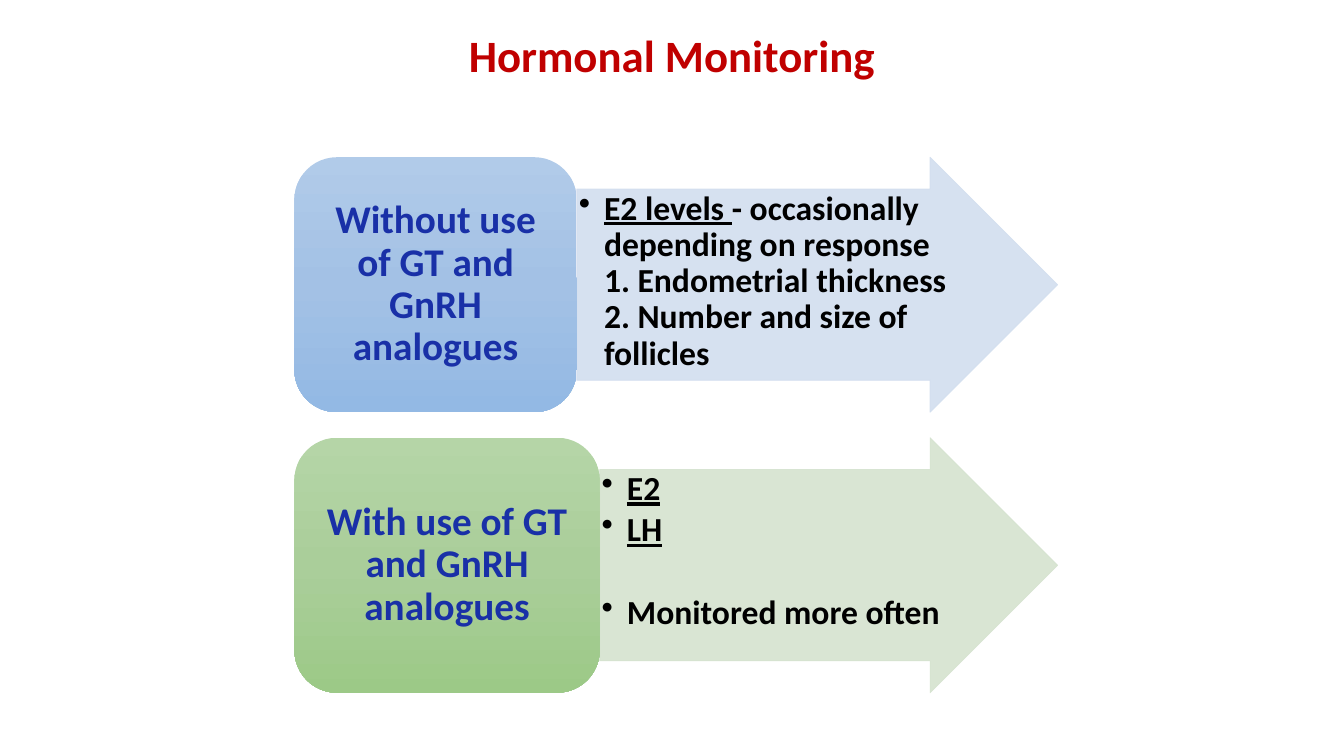
import copy
from dataclasses import dataclass

import pptx
import pptx.dml.color
import pptx.enum.shapes
import pptx.enum.text
import pptx.oxml
import pptx.oxml.ns
import pptx.util

Inches, Pt = pptx.util.Inches, pptx.util.Pt
SHAPE = pptx.enum.shapes.MSO_SHAPE
ALIGN = pptx.enum.text.PP_ALIGN
ANCHOR = pptx.enum.text.MSO_ANCHOR
qn = pptx.oxml.ns.qn


@dataclass(frozen=True)
class Theme:
    font: str = "Calibri"
    title: str = "C00000"
    label: str = "1930A7"
    body: str = "000000"
    title_size: int = 32
    label_size: int = 28
    body_size: int = 24
    blues: tuple = ("B1CBE9", "A3C1E5", "93B9E4")
    greens: tuple = ("B5D5A7", "AACE9A", "9CC987")
    blue_tint: str = "D2DEEF"
    green_tint: str = "D5E3CF"


THEME = Theme()

# Grid: two rows, each split into a label and an arrow
WIDTH, HEIGHT = 13.33, 7.5
LEFT, TOP = 2.92, 1.56
SPAN, ROW = 7.57, 2.53
PITCH = ROW * 1.1


def rgb(code):
    return pptx.dml.color.RGBColor.from_string(code)


def frame(shape, anchor, side, edge):
    box = shape.text_frame
    box.word_wrap = True
    box.vertical_anchor = anchor
    box.margin_left = box.margin_right = Inches(side)
    box.margin_top = box.margin_bottom = Inches(edge)
    return box


def write(para, text, size, color, align=ALIGN.LEFT, lead=0.9, line=False):
    """Add bold text to a paragraph; a newline breaks the line."""
    para.alignment = align
    para.line_spacing = lead
    for index, part in enumerate(text.split("\n")):
        if index:
            para.add_line_break()
        run = para.add_run()
        run.text = part
        font = run.font
        font.name, font.size, font.bold = THEME.font, Pt(size), True
        font.underline = line
        font.color.rgb = rgb(color)


def bullet(para):
    props = para._p.get_or_add_pPr()
    props.set("marL", str(Inches(0.25)))
    props.set("indent", str(-Inches(0.25)))
    mark = pptx.oxml.parse_xml(
        f'<a:buChar {pptx.oxml.ns.nsdecls("a")} char="•"/>')
    props.append(mark)


def block(slide, kind, left, top, width):
    shape = slide.shapes.add_shape(
        kind, Inches(left), Inches(top), Inches(width), Inches(ROW))
    shape.shadow.inherit = False
    return shape


def arrow(slide, left, top, width, tint, items):
    shape = block(slide, SHAPE.RIGHT_ARROW, left, top, width)
    shape.adjustments[0], shape.adjustments[1] = 0.75, 0.5
    shape.fill.solid()
    shape.fill.fore_color.rgb = rgb(tint)
    shape.line.color.rgb = rgb(tint)
    shape.line.width = Pt(0.5)
    # Fill and outline at 90 % opacity
    for color in shape._element.spPr.iter(qn("a:srgbClr")):
        pptx.oxml.ns.qn("a:alpha")
        color.append(pptx.oxml.parse_xml(
            f'<a:alpha {pptx.oxml.ns.nsdecls("a")} val="90000"/>'))
    box = frame(shape, ANCHOR.TOP, 0.02, 0.02)
    for index, (runs, before) in enumerate(items):
        para = box.add_paragraph() if index else box.paragraphs[0]
        bullet(para)
        para.space_after = Pt(3.5)
        if before:
            para.space_before = Pt(before)
        for text, line in runs:
            write(para, text, THEME.body_size, THEME.body, line=line)


def label(slide, left, top, width, shades, text):
    shape = block(slide, SHAPE.ROUNDED_RECTANGLE, left, top, width)
    shape.line.fill.background()
    shape.fill.gradient()
    shape.fill.gradient_angle = 270
    # Add a middle stop to the default pair
    stops = shape._element.spPr.find(".//" + qn("a:gsLst"))
    stops.insert(1, copy.deepcopy(stops[0]))
    for stop, shade, place in zip(shape.fill.gradient_stops, shades, (0, 0.5, 1)):
        stop.color.rgb = rgb(shade)
        stop.position = place
    box = frame(shape, ANCHOR.MIDDLE, 0.12, 0.06)
    write(box.paragraphs[0], text, THEME.label_size, THEME.label, ALIGN.CENTER)


def head(slide, text):
    shape = slide.shapes.title
    shape.left, shape.top = Inches(WIDTH / 8), Inches(-0.04)
    shape.width, shape.height = Inches(WIDTH * 0.75), Inches(0.82)
    box = frame(shape, ANCHOR.TOP, 0.1, 0.05)
    box.auto_size = pptx.enum.text.MSO_AUTO_SIZE.SHAPE_TO_FIT_TEXT
    write(box.paragraphs[0], text, THEME.title_size, THEME.title,
          ALIGN.CENTER, lead=1.5)


def main():
    deck = pptx.Presentation()
    deck.slide_width, deck.slide_height = Inches(WIDTH), Inches(HEIGHT)
    slide = deck.slides.add_slide(deck.slide_layouts[5])
    head(slide, "Hormonal Monitoring")

    # Each row: label share, shades, tint, label, then bullets as (runs, space before)
    rows = [
        (0.37, THEME.blues, THEME.blue_tint,
         "Without use of GT and GnRH analogues",
         [([("E2 levels ", True),
            ("- occasionally depending on response\n"
             "1. Endometrial thickness\n"
             "2. Number and size of follicles", False)], 0)]),
        (0.4, THEME.greens, THEME.green_tint,
         "With use of GT and GnRH analogues",
         [([("E2", True)], 0),
          ([("LH", True)], 0),
          ([("Monitored more often", False)], 30)]),
    ]
    for index, (share, shades, tint, name, items) in enumerate(rows):
        top, split = TOP + index * PITCH, SPAN * share
        arrow(slide, LEFT + split, top, SPAN - split, tint, items)
        label(slide, LEFT, top, split, shades, name)

    deck.save("out.pptx")


if __name__ == "__main__":
    main()
